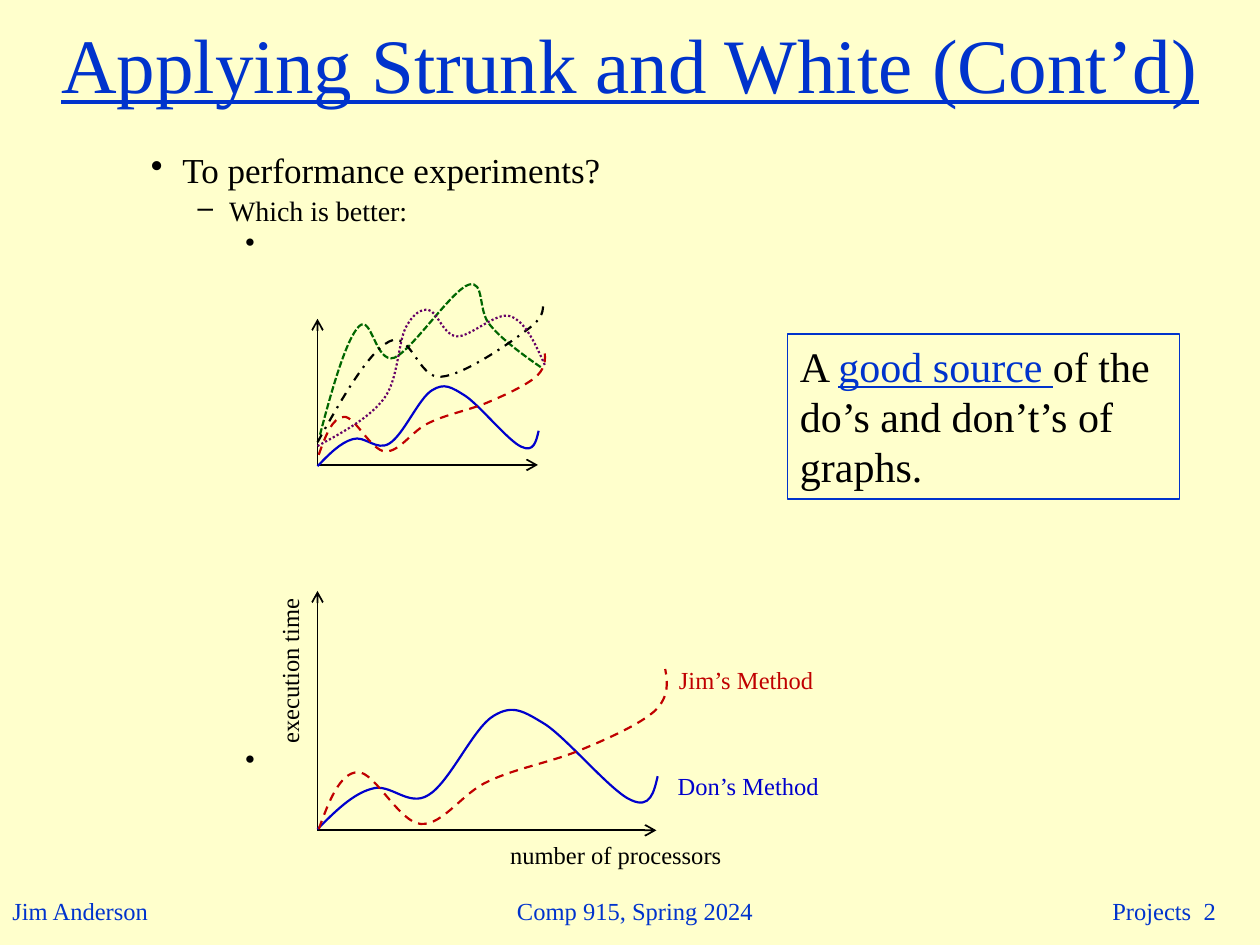
import pptx
import pptx.util
import pptx.dml.color
import pptx.enum.dml
import pptx.enum.shapes
import pptx.enum.text
import pptx.oxml
import pptx.oxml.ns

Inches = pptx.util.Inches
Pt = pptx.util.Pt
RGB = pptx.dml.color.RGBColor
Dash = pptx.enum.dml.MSO_LINE
Align = pptx.enum.text.PP_ALIGN
Anchor = pptx.enum.text.MSO_ANCHOR
Fit = pptx.enum.text.MSO_AUTO_SIZE
qn = pptx.oxml.ns.qn

FONT = "Times New Roman"
CREAM = RGB(0xFF, 0xFF, 0xCC)
ROYAL = RGB(0x00, 0x33, 0xCC)
BLACK = RGB(0x00, 0x00, 0x00)
BLUE = RGB(0x00, 0x00, 0xCC)
RED = RGB(0xC0, 0x00, 0x00)
GREEN = RGB(0x00, 0x66, 0x00)
PURPLE = RGB(0x66, 0x00, 0x66)

DON = [(0, 0), (.14, .14), (.28, .28), (.43, .32), (.58, .37), (.72, .17), (.88, .27),
       (1.05, .37), (1.24, .81), (1.4, .9), (1.55, .99), (1.63, .94), (1.81, .83),
       (1.99, .71), (2.34, .29), (2.49, .23), (2.64, .16), (2.67, .29), (2.7, .42)]
JIM = [(0, 0), (.08, .22), (.17, .45), (.31, .45), (.44, .46), (.64, .05), (.81, .04),
       (.99, .03), (1.14, .29), (1.35, .38), (1.56, .48), (1.84, .53), (2.06, .62),
       (2.28, .71), (2.55, .83), (2.67, .94), (2.78, 1.05), (2.77, 1.16), (2.75, 1.27)]
PEAKS = [(0, 0), (.1, .38), (.21, .76), (.31, .86), (.41, .96), (.44, .56), (.59, .61),
         (.73, .67), (1.05, 1.15), (1.18, 1.19), (1.31, 1.23), (1.25, .98), (1.35, .87),
         (1.44, .76), (1.6, .64), (1.76, .53)]
SWELL = [(0, 0), (.2, .36), (.41, .72), (.57, .8), (.74, .89), (.8, .5), (.98, .52),
         (1.16, .53), (1.53, .79), (1.66, .89), (1.8, .99), (1.79, 1.05), (1.79, 1.11)]
HUMPS = [(0, 0), (.2, .11), (.41, .22), (.53, .38), (.64, .53), (.64, .82), (.7, .94),
         (.76, 1.05), (.82, 1.09), (.88, 1.08), (.95, 1.07), (1, .88), (1.1, .87),
         (1.21, .86), (1.42, 1.07), (1.53, 1.03), (1.65, .99), (1.73, .81), (1.81, .63)]


def style(font, size, color):
    """Set the face, size and colour of a font."""
    font.name, font.size = FONT, Pt(size)
    font.color.rgb = color


def label(slide, box, text, color, align=Align.LEFT, anchor=Anchor.TOP, turn=0):
    """Place one line of 14-point text in the box."""
    shape = slide.shapes.add_textbox(*map(Inches, box))
    shape.rotation = turn
    frame = shape.text_frame
    frame.word_wrap = False
    frame.vertical_anchor = anchor
    para = frame.paragraphs[0]
    para.text, para.alignment = text, align
    style(para.font, 14, color)


def title(slide, box, text):
    """Move and format the title placeholder."""
    shape = slide.shapes.title
    shape.left, shape.top, shape.width, shape.height = map(Inches, box)
    frame = shape.text_frame
    frame.text = text
    frame.auto_size = Fit.NONE
    frame.vertical_anchor = Anchor.MIDDLE
    para = frame.paragraphs[0]
    para.alignment = Align.CENTER
    style(para.font, 44, ROYAL)
    para.font.underline = True


def bullets(slide, box, items):
    """Write bulleted lines given as text, mark, size, indent and space before."""
    frame = slide.shapes.add_textbox(*map(Inches, box)).text_frame
    frame.word_wrap = True
    for i, (text, mark, size, indent, space) in enumerate(items):
        para = frame.add_paragraph() if i else frame.paragraphs[0]
        para.text = text
        para.line_spacing, para.space_before = 0.9, Pt(space)
        style(para.font, size, BLACK)
        props = para._p.get_or_add_pPr()
        props.set("marL", str(Inches(indent)))
        props.set("indent", str(Inches(-0.25)))
        sign = pptx.oxml.parse_xml(
            '<a:buChar xmlns:a="http://schemas.openxmlformats.org/drawingml/2006/main"'
            f' char="{mark}"/>')
        props.find(qn("a:defRPr")).addprevious(sign)


def arrow(slide, start, end):
    """Draw a black line with an open arrowhead at its end."""
    line = slide.shapes.add_connector(
        pptx.enum.shapes.MSO_CONNECTOR.STRAIGHT, *map(Inches, start + end))
    line.line.color.rgb, line.line.width = BLACK, Pt(1)
    props = line.element.spPr
    props.find(qn("a:ln")).append(props.makeelement(qn("a:tailEnd"), {"type": "arrow"}))
    props.append(props.makeelement(qn("a:effectLst"), {}))


def curve(slide, start, points, scale, color, dash):
    """Draw a Bezier curve whose points rise from its start."""
    spots = [(Inches(start[0] + x * scale[0]), Inches(start[1] - y * scale[1]))
             for x, y in points]
    build = slide.shapes.build_freeform(*spots[0])
    build.add_line_segments(spots[1:], close=False)
    shape = build.convert_to_shape()
    shape.shadow.inherit = False
    shape.fill.background()
    shape.line.color.rgb, shape.line.width = color, Pt(1.25)
    shape.line.dash_style = dash
    steps = list(shape.element.iter(qn("a:lnTo")))
    for i in range(0, len(steps), 3):
        bend = steps[i].makeelement(qn("a:cubicBezTo"), {})
        steps[i].addprevious(bend)
        for step in steps[i:i + 3]:
            bend.append(step[0])
            step.getparent().remove(step)


def graph(slide, box, curves):
    """Draw two axes along the box and curves given by their offset from its corner."""
    left, top, width, height = box
    base = top + height
    arrow(slide, (left, base), (left + width, base))
    arrow(slide, (left, base), (left, top))
    for (x, y), points, scale, color, dash in curves:
        curve(slide, (left + x, base - y), points, scale, color, dash)


def legend(slide, box):
    """Name the axes and curves of the graph in the box."""
    left, top, width, height = box
    base, right = top + height, left + width
    label(slide, (left + 1.43, base + 0.03, 1.89, 0.34), "number of processors", BLACK)
    label(slide, (left - 0.9, top + 0.46, 1.36, 0.34), "execution time", BLACK, turn=270)
    label(slide, (right + 0.08, top + 0.54, 1.28, 0.34), "Jim’s Method", RED)
    label(slide, (right + 0.07, top + 1.38, 1.33, 0.34), "Don’s Method", BLUE)


def note(slide, box):
    """Place the framed note."""
    shape = slide.shapes.add_shape(
        pptx.enum.shapes.MSO_SHAPE.RECTANGLE, *map(Inches, box))
    shape.shadow.inherit = False
    shape.fill.background()
    shape.line.color.rgb, shape.line.width = ROYAL, Pt(0.75)
    frame = shape.text_frame
    frame.word_wrap, frame.vertical_anchor = True, Anchor.TOP
    first, last = frame.paragraphs[0], frame.add_paragraph()
    for text in ("A ", "good source ", "of the"):
        first.add_run().text = text
    last.text = "do’s and don’t’s of graphs."
    for para in (first, last):
        para.alignment = Align.LEFT
        style(para.font, 24, BLACK)
    for run in first.runs:
        style(run.font, 24, BLACK)
    link = first.runs[1].font
    link.color.rgb, link.underline = ROYAL, True


def footer(slide):
    """Place the three footer texts."""
    label(slide, (0, 7.06, 1.29, 0.33), "Jim Anderson", ROYAL)
    label(slide, (4, 6.98, 2.08, 0.5), "Comp 915, Spring 2024", ROYAL,
          Align.CENTER, Anchor.MIDDLE)
    label(slide, (8.65, 7.02, 1.1, 0.42), "Projects  2", ROYAL, Align.RIGHT, Anchor.MIDDLE)


def main():
    """Build and save the slide."""
    deck = pptx.Presentation()
    deck.slide_width, deck.slide_height = Inches(10), Inches(7.5)
    slide = deck.slides.add_slide(deck.slide_layouts[5])
    slide.background.fill.solid()
    slide.background.fill.fore_color.rgb = CREAM
    footer(slide)
    title(slide, (0, 0, 10, 1), "Applying Strunk and White (Cont’d)")
    bullets(slide, (0.16, 1.17, 9.67, 5.85), [
        ("To performance experiments?", "•", 20, 1.19, 4),
        ("Which is better:", "–", 16, 1.56, 3.2),
        (" ", "•", 16, 1.94, 3.2),
        (" ", "•", 16, 1.94, 278)])
    small, full = (0.65, 0.67), (1, 1)
    graph(slide, (2.52, 2.53, 1.75, 1.16), [
        ((0, -0.01), DON, small, BLUE, Dash.SOLID),
        ((0.01, 0.08), JIM, small, RED, Dash.DASH),
        ((0.02, 0.24), PEAKS, full, GREEN, Dash.SQUARE_DOT),
        ((0, 0.18), SWELL, full, BLACK, Dash.DASH_DOT),
        ((0, 0.15), HUMPS, full, PURPLE, Dash.ROUND_DOT)])
    large = (2.52, 4.69, 2.69, 1.9)
    graph(slide, large, [
        ((0, 0.01), DON, full, BLUE, Dash.SOLID),
        ((0.01, 0.01), JIM, full, RED, Dash.DASH)])
    legend(slide, large)
    note(slide, (6.25, 2.65, 3.11, 1.31))
    deck.save("out.pptx")


if __name__ == "__main__":
    main()
